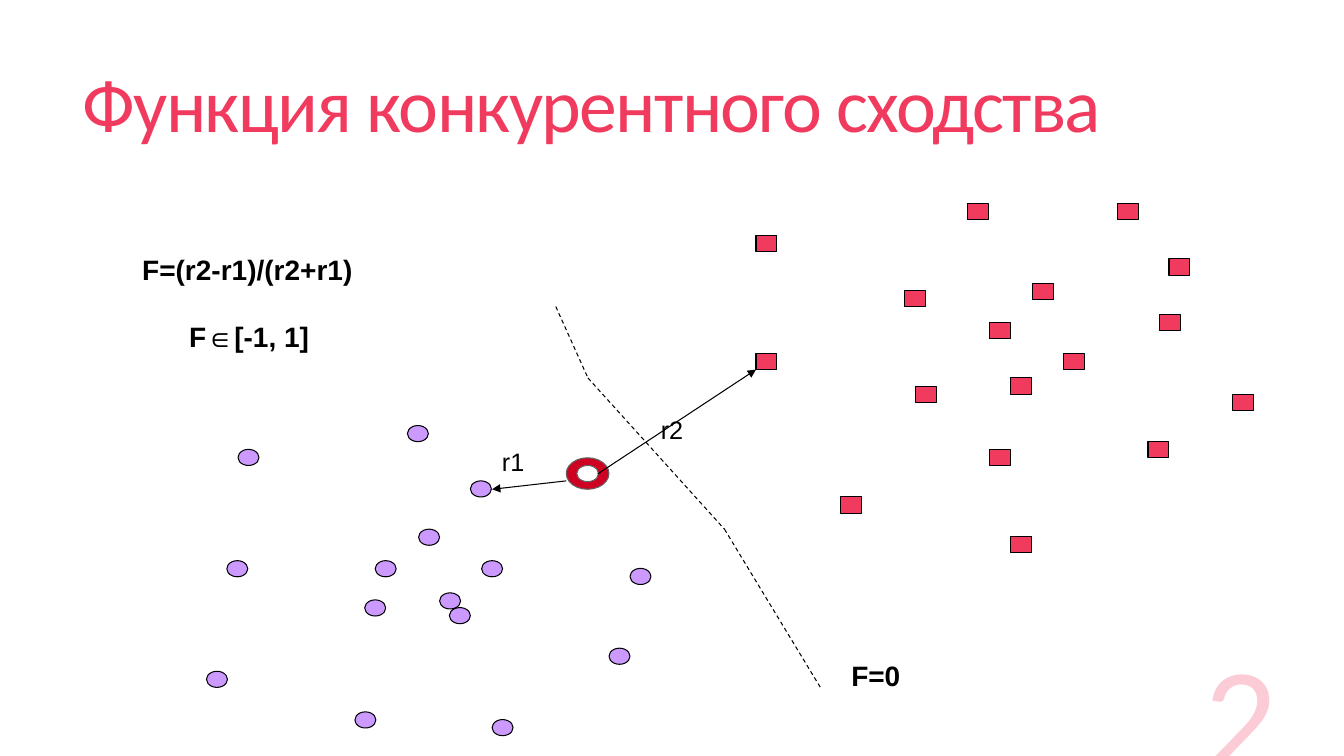
from itertools import pairwise
from lxml.etree import SubElement as Sub
from pptx import Presentation
from pptx.dml.color import RGBColor as RGB
from pptx.enum.dml import MSO_LINE as Dash
from pptx.enum.shapes import MSO_CONNECTOR as Link, MSO_SHAPE as Kind
from pptx.enum.text import MSO_ANCHOR as Anchor, MSO_AUTO_SIZE as Fit, PP_ALIGN as Align
from pptx.oxml.ns import qn
from pptx.util import Pt

PINK, BLACK, LILAC = "F03B5E", "000000", "CC99FF"

deck = Presentation()
deck.slide_width, deck.slide_height = Pt(960), Pt(540)
slide = deck.slides.add_slide(deck.slide_layouts[6])
shapes = slide.shapes


def paint(part, tint):
    if hasattr(part, "solid"):
        part.solid()
        part = part.fore_color
    part.rgb = RGB.from_string(tint)


def write(area, lines, look, tint=BLACK, wrap=False, anchor=Anchor.TOP):
    frame = shapes.add_textbox(*map(Pt, area)).text_frame
    frame.word_wrap = wrap
    frame.auto_size = Fit.NONE if wrap else Fit.SHAPE_TO_FIT_TEXT
    frame.vertical_anchor = anchor
    for i, line in enumerate(lines):
        para = frame.paragraphs[0] if i == 0 else frame.add_paragraph()
        run = para.add_run()
        run.text = line
        for key, value in look.items():
            setattr(run.font, key, value)
        paint(run.font.color, tint)
    return frame.paragraphs


head = {"name": "Calibri", "size": Pt(54)}
note = {"name": "Arial", "size": Pt(18)}
bold = {"name": "Arial", "size": Pt(20), "bold": True}
page = {"name": "Calibri", "size": Pt(103)}

title = write((52, 39.5, 848, 78), ["Функция конкурентного сходства"], head, PINK, True, Anchor.MIDDLE)[0]
title.line_spacing = 0.85
title.runs[0].font._element.set("spc", "-120")

squares = [
    (691, 145.5), (880.5, 281.5), (798, 145.5), (820, 315.5), (646, 207.5), (759.5, 252.5),
    (540, 168), (722, 383), (706.5, 230.5), (737.5, 202.5), (828, 224.5), (722, 270),
    (835, 185), (540, 252.5), (600.5, 355), (654, 276), (706.5, 321),
]
dots = [
    (147.5, 479.5), (162, 400.5), (299, 378), (344, 400.5), (321, 434), (253.5, 508.5),
    (351.5, 514), (260.5, 428.5), (435, 463), (314, 423.5), (336, 343.5), (170, 321),
    (268, 400.5), (450, 406), (291, 304),
]
marks = [(Kind.RECTANGLE, x, y, 15, 11.5, PINK, BLACK) for x, y in squares]
marks += [(Kind.OVAL, x, y, 15, 11.5, LILAC, BLACK) for x, y in dots]
marks += [
    (Kind.OVAL, 404.5, 327, 30.5, 22.5, "CF0123", "636363"),
    (Kind.OVAL, 412, 332.5, 15.5, 11.5, "FFFFFF", "636363"),
]
for kind, x, y, wide, high, tint, edge in marks:
    mark = shapes.add_shape(kind, Pt(x), Pt(y), Pt(wide), Pt(high))
    mark.shadow.inherit = False
    paint(mark.fill, tint)
    paint(mark.line.fill, edge)
    mark.line.width = Pt(0.75)

border = [(397, 219), (420, 270), (517.5, 378), (586, 491)]
links = [((427, 338.5), (540, 264), True), ((404.5, 343.5), (351.5, 349.5), True)]
links += [(a, b, False) for a, b in pairwise(border)]
for start, end, arrow in links:
    link = shapes.add_connector(Link.STRAIGHT, *map(Pt, start + end))
    paint(link.line.fill, BLACK)
    link.line.width = Pt(0.75)
    Sub(link._element.spPr, qn("a:effectLst"))
    if arrow:
        Sub(link.line._get_or_add_ln(), qn("a:tailEnd"), type="triangle")
    else:
        link.line.dash_style = Dash.DASH

write((351.5, 315.5, 31, 29), ["r1"], note)
write((465, 292.5, 31, 29), ["r2"], note)
write((601, 471.5, 50, 26.5), ["F=0"], bold)[0].line_spacing = 0.8

scope = write((94.5, 177, 165.5, 80), ["F=(r2-r1)/(r2+r1)", "F∈[-1, 1]"], bold)[1]
scope.space_before = Pt(24)
scope._p.get_or_add_pPr().set("marL", str(Pt(33.5)))

count = write((690, 463, 230, 110), ["2"], page, PINK, True, Anchor.BOTTOM)[0]
count.alignment = Align.RIGHT
tone = count.runs[0].font._element.find(".//" + qn("a:srgbClr"))
Sub(tone, qn("a:alpha"), val="25000")

deck.save("out.pptx")
